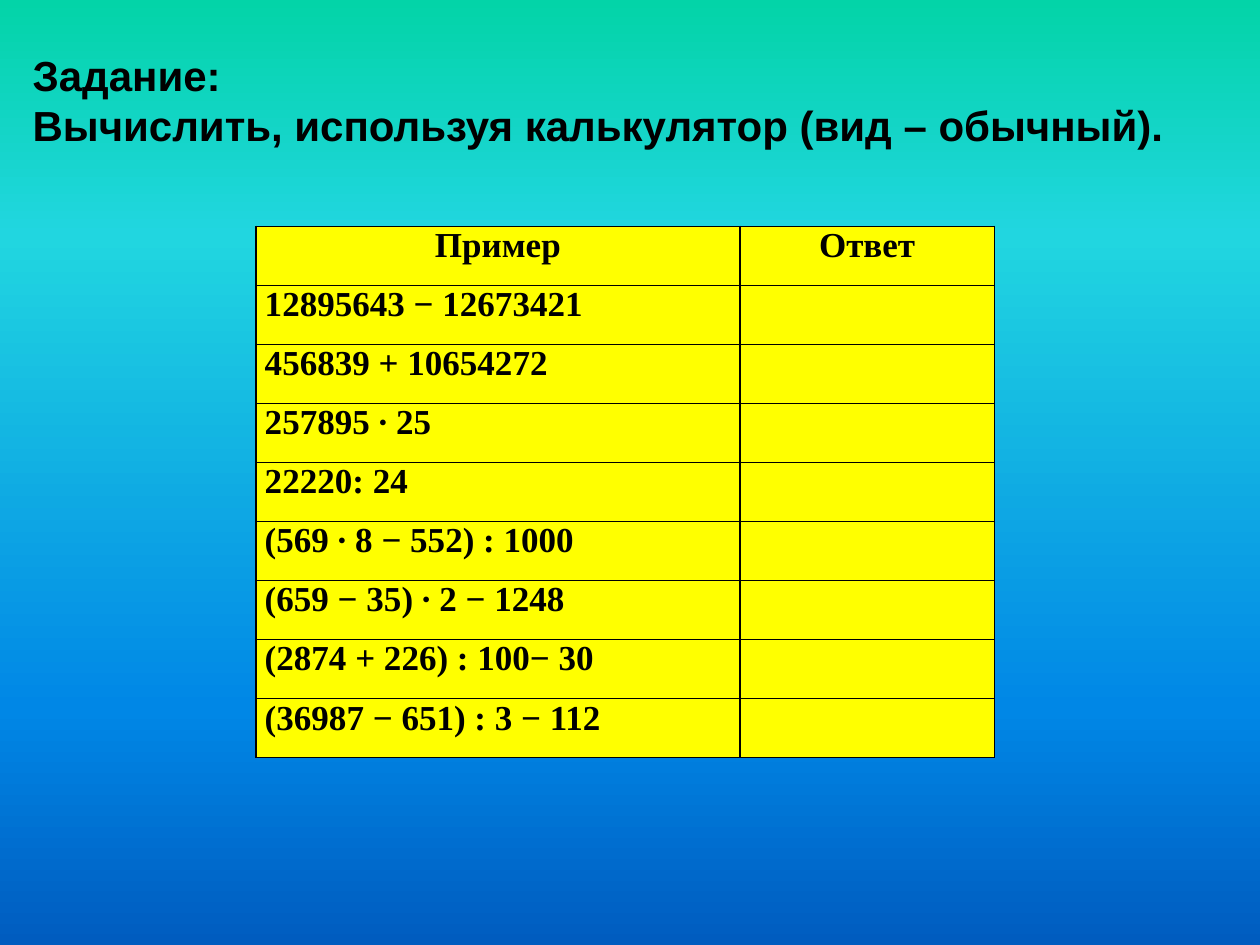
from lxml.etree import SubElement
from pptx import Presentation
from pptx.dml.color import RGBColor
from pptx.enum.text import MSO_ANCHOR, PP_ALIGN
from pptx.oxml.ns import qn
from pptx.util import Pt

BLACK, YELLOW = "000000", "FFFF00"
GRADIENT = {0: "03D4A8", 25: "21D6E0", 75: "0087E6", 100: "005CBF"}
TASK = ["Задание:", "Вычислить, используя калькулятор (вид – обычный)."]
HEADINGS = ["Пример", "Ответ"]
EXAMPLES = [
    "12895643 − 12673421",
    "456839 + 10654272",
    "257895 ∙ 25",
    "22220: 24",
    "(569 ∙ 8 − 552) : 1000",
    "(659 − 35) ∙ 2 − 1248",
    "(2874 + 226) : 100− 30",
    "(36987 − 651) : 3 − 112",
]
COLUMN_WIDTHS = [276.5, 145.5]
ROW_HEIGHT = 33.75
TASK_FONT = {"name": "Arial", "size": Pt(24), "bold": True}
TABLE_FONT = {"name": "Times New Roman", "size": Pt(20), "bold": True}
TASK_FRAME = {
    "word_wrap": True, "vertical_anchor": MSO_ANCHOR.TOP,
    "margin_left": Pt(7.2), "margin_right": Pt(7.2),
    "margin_top": Pt(6), "margin_bottom": Pt(3.6),
}
CELL_MARGINS = {
    "margin_left": Pt(5), "margin_right": Pt(5),
    "margin_top": Pt(0), "margin_bottom": Pt(0),
}


def rgb(color):
    return RGBColor.from_string(color)


def apply(target, values):
    for name, value in values.items():
        setattr(target, name, value)


def write(paragraph, text, font):
    run = paragraph.add_run()
    run.text = text
    apply(run.font, font)
    run.font.color.rgb = rgb(BLACK)


def paint_background(slide):
    """Fill the slide from top to bottom with the four gradient colours."""
    fill = slide.background.fill
    fill.gradient()
    fill.gradient_angle = 270
    stops = slide.element.find(".//" + qn("a:gsLst"))
    for stop in list(stops):
        stops.remove(stop)
    for percent, color in GRADIENT.items():
        stop = SubElement(stops, qn("a:gs"), pos=str(percent * 1000))
        SubElement(stop, qn("a:srgbClr"), val=color)


def add_task(slide):
    frame = slide.shapes.add_textbox(Pt(11.5), Pt(22.3), Pt(680.4), Pt(94.3)).text_frame
    apply(frame, TASK_FRAME)
    for index, line in enumerate(TASK):
        paragraph = frame.add_paragraph() if index else frame.paragraphs[0]
        write(paragraph, line, TASK_FONT)


def add_borders(cell):
    properties = cell._tc.get_or_add_tcPr()
    for index, side in enumerate(["a:lnL", "a:lnR", "a:lnT", "a:lnB"]):
        border = properties.makeelement(qn(side), {"w": str(Pt(1))})
        solid = SubElement(border, qn("a:solidFill"))
        SubElement(solid, qn("a:srgbClr"), val=BLACK)
        properties.insert(index, border)


def add_exercises(slide):
    rows = [HEADINGS] + [[example, ""] for example in EXAMPLES]
    table = slide.shapes.add_table(
        len(rows), len(HEADINGS), Pt(146.3), Pt(129.4),
        Pt(sum(COLUMN_WIDTHS)), Pt(ROW_HEIGHT * len(rows))).table
    apply(table, {"first_row": False, "horz_banding": False})
    for column, width in zip(table.columns, COLUMN_WIDTHS):
        column.width = Pt(width)
    for row_index, row in enumerate(rows):
        table.rows[row_index].height = Pt(ROW_HEIGHT)
        for column_index, text in enumerate(row):
            cell = table.cell(row_index, column_index)
            apply(cell, CELL_MARGINS)
            cell.fill.solid()
            cell.fill.fore_color.rgb = rgb(YELLOW)
            add_borders(cell)
            paragraph = cell.text_frame.paragraphs[0]
            if row is HEADINGS:
                paragraph.alignment = PP_ALIGN.CENTER
            if text:
                write(paragraph, text, TABLE_FONT)


def main():
    presentation = Presentation()
    apply(presentation, {"slide_width": Pt(720), "slide_height": Pt(540)})
    slide = presentation.slides.add_slide(presentation.slide_layouts[6])
    paint_background(slide)
    add_exercises(slide)
    add_task(slide)
    presentation.save("out.pptx")


if __name__ == "__main__":
    main()
